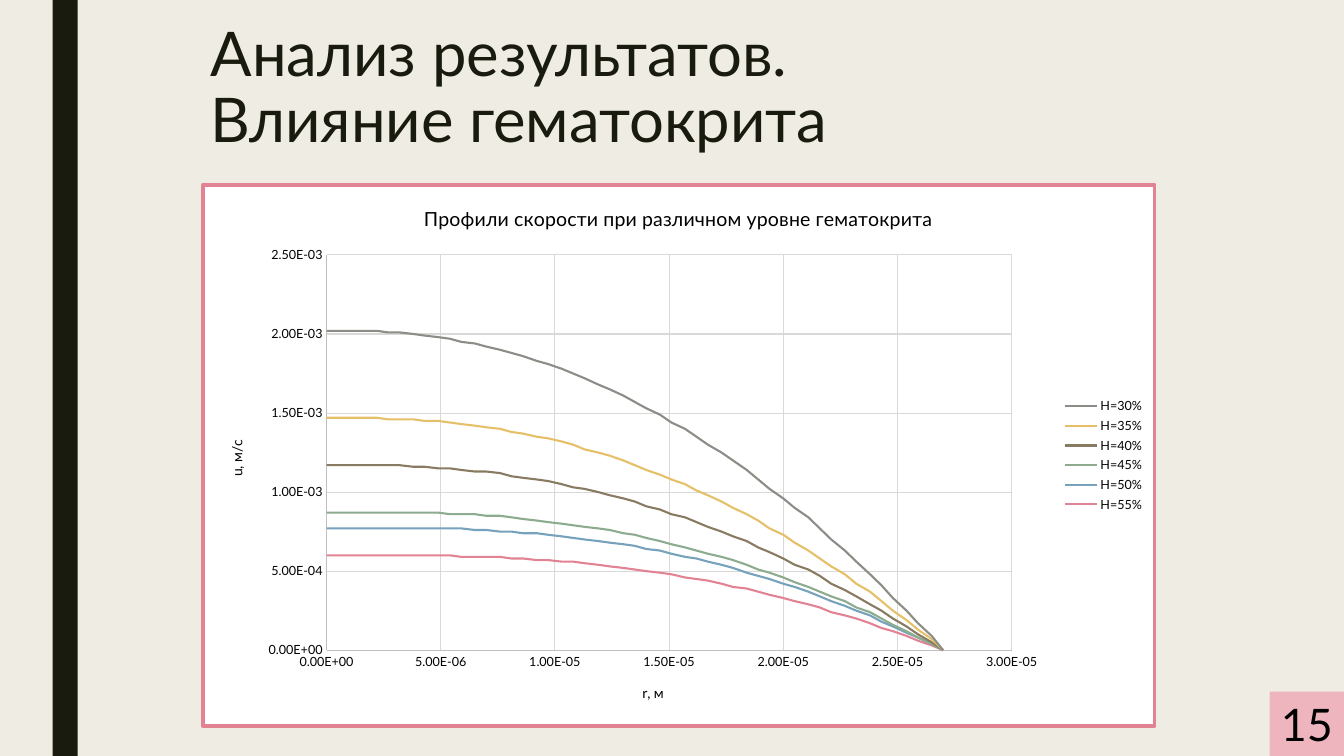
from lxml import etree
from pptx import Presentation
from pptx import util as u
from pptx.chart.data import XyChartData
from pptx.dml.color import RGBColor
from pptx.enum import chart as ch, shapes, text
from pptx.oxml import parse_xml
from pptx.oxml.ns import nsdecls, qn

Pt = u.Pt
FONT = "Lato"
DARK, BLACK, PINK = "191B0E", "000000", "E28394"
SCI = "0.00E+00"
STEPS = 50

# Name, colour, peak velocity in 1e-5 m/s, relative radius of the plug core
PROFILES = [
    ("H=30%", "8C8D86", 202.4, 0.008),
    ("H=35%", "E6C069", 146.8, 0.024),
    ("H=40%", "897B61", 117.2, 0.024),
    ("H=45%", "8DAB8E", 87.3, 0.058),
    ("H=50%", "77A2BB", 77.2, 0.081),
    ("H=55%", PINK, 59.8, 0.09),
]


def casson(t, core):
    """Casson flow in a tube: shape of the velocity at relative radius t."""
    t = max(t, core)
    return 1 - t ** 2 - 8 / 3 * core ** 0.5 * (1 - t ** 1.5) + 2 * core * (1 - t)


def rgb(color):
    return RGBColor.from_string(color)


def set_font(font, size, color=BLACK):
    font.name, font.size, font.bold = FONT, Pt(size), False
    font.color.rgb = rgb(color)


def set_line(line, color, width):
    line.color.rgb = rgb(color)
    line.width = Pt(width)


def add_rect(s, box, color):
    sp = s.shapes.add_shape(shapes.MSO_SHAPE.RECTANGLE, *map(Pt, box))
    sp.shadow.inherit = False
    sp.fill.solid()
    sp.fill.fore_color.rgb = rgb(color)
    sp.line.fill.background()
    return sp


def add_heading(s, box, lines):
    tf = s.shapes.add_textbox(*map(Pt, box)).text_frame
    tf.word_wrap = True
    tf.text = "\n".join(lines)
    for p in tf.paragraphs:
        p.line_spacing = 0.89
        set_font(p.font, 44, DARK)


def add_page_number(s, box, number):
    tf = add_rect(s, box, "EEB5BF").text_frame
    tf.word_wrap = False
    tf.vertical_anchor = text.MSO_ANCHOR.MIDDLE
    p = tf.paragraphs[0]
    p.text = number
    p.alignment = text.PP_ALIGN.CENTER
    set_font(p.font, 32)


def set_title(title, words, size):
    tf = title.text_frame
    tf.text = words
    set_font(tf.paragraphs[0].font, size)


def style_axis(axis, title, top, step):
    axis.minimum_scale, axis.maximum_scale, axis.major_unit = 0, top, step
    axis.major_tick_mark = axis.minor_tick_mark = ch.XL_TICK_MARK.NONE
    axis.tick_labels.number_format = SCI
    axis.tick_labels.number_format_is_linked = False
    set_font(axis.tick_labels.font, 9)
    set_line(axis.format.line, "BFBFBF", 0.75)
    axis.has_major_gridlines = True
    set_line(axis.major_gridlines.format.line, "D9D9D9", 0.75)
    set_title(axis.axis_title, title, 10)


def frame_chart(chart, fill, border, width):
    chart._chartSpace.find(qn("c:chart")).addnext(parse_xml(
        f'<c:spPr {nsdecls("c", "a")}><a:solidFill><a:srgbClr val="{fill}"/></a:solidFill>'
        f'<a:ln w="{Pt(width)}"><a:solidFill><a:srgbClr val="{border}"/></a:solidFill>'
        '<a:round/></a:ln></c:spPr>'))


def place_plot(chart, x, y, w, h):
    area = chart._chartSpace.find(".//" + qn("c:plotArea"))
    for old in area.findall(qn("c:layout")):
        area.remove(old)
    layout = etree.Element(qn("c:layout"))
    manual = etree.SubElement(layout, qn("c:manualLayout"))
    for tag, val in (("layoutTarget", "inner"), ("xMode", "edge"), ("yMode", "edge"),
                     ("x", x), ("y", y), ("w", w), ("h", h)):
        etree.SubElement(manual, qn("c:" + tag)).set("val", str(val))
    area.insert(0, layout)


def profile_data():
    data = XyChartData(number_format=SCI)
    for name, _, peak, core in PROFILES:
        series = data.add_series(name)
        for i in range(STEPS + 1):
            t = i / STEPS
            speed = round(peak * casson(t, core) / casson(0, core))
            series.add_data_point(round(270 * t) / 1e7, speed / 1e5)
    return data


def add_profiles(s, box):
    kind = ch.XL_CHART_TYPE.XY_SCATTER_SMOOTH_NO_MARKERS
    chart = s.shapes.add_chart(kind, *map(Pt, box), profile_data()).chart
    set_font(chart.font, 10)
    set_title(chart.chart_title, "Профили скорости при различном уровне гематокрита", 14)
    chart.chart_title.include_in_layout = False
    style_axis(chart.category_axis, "r, м", 3e-5, 5e-6)
    style_axis(chart.value_axis, "u, м/с", 2.5e-3, 5e-4)
    for series, (_, color, _, _) in zip(chart.plots[0].series, PROFILES):
        series.smooth = True
        set_line(series.format.line, color, 1.5)
    chart.has_legend = True
    chart.legend.position = ch.XL_LEGEND_POSITION.RIGHT
    chart.legend.include_in_layout = False
    set_font(chart.legend.font, 9)
    frame_chart(chart, "FFFFFF", PINK, 2.75)
    place_plot(chart, 0.13, 0.13, 0.72, 0.73)


def main():
    prs = Presentation()
    prs.slide_width, prs.slide_height = Pt(960), Pt(540)
    s = prs.slides.add_slide(prs.slide_layouts[6])

    # Background and side bar
    s.background.fill.solid()
    s.background.fill.fore_color.rgb = rgb("EFEDE3")
    add_rect(s, (37.5, 0, 18, 540), DARK)

    # Heading, chart and page number
    add_heading(s, (143.5, 13.5, 749.5, 117), ["Анализ результатов.", "Влияние гематокрита"])
    add_profiles(s, (143.5, 130.5, 682.5, 389.5))
    add_page_number(s, (907, 494, 53, 46), "15")

    prs.save("out.pptx")


if __name__ == "__main__":
    main()
